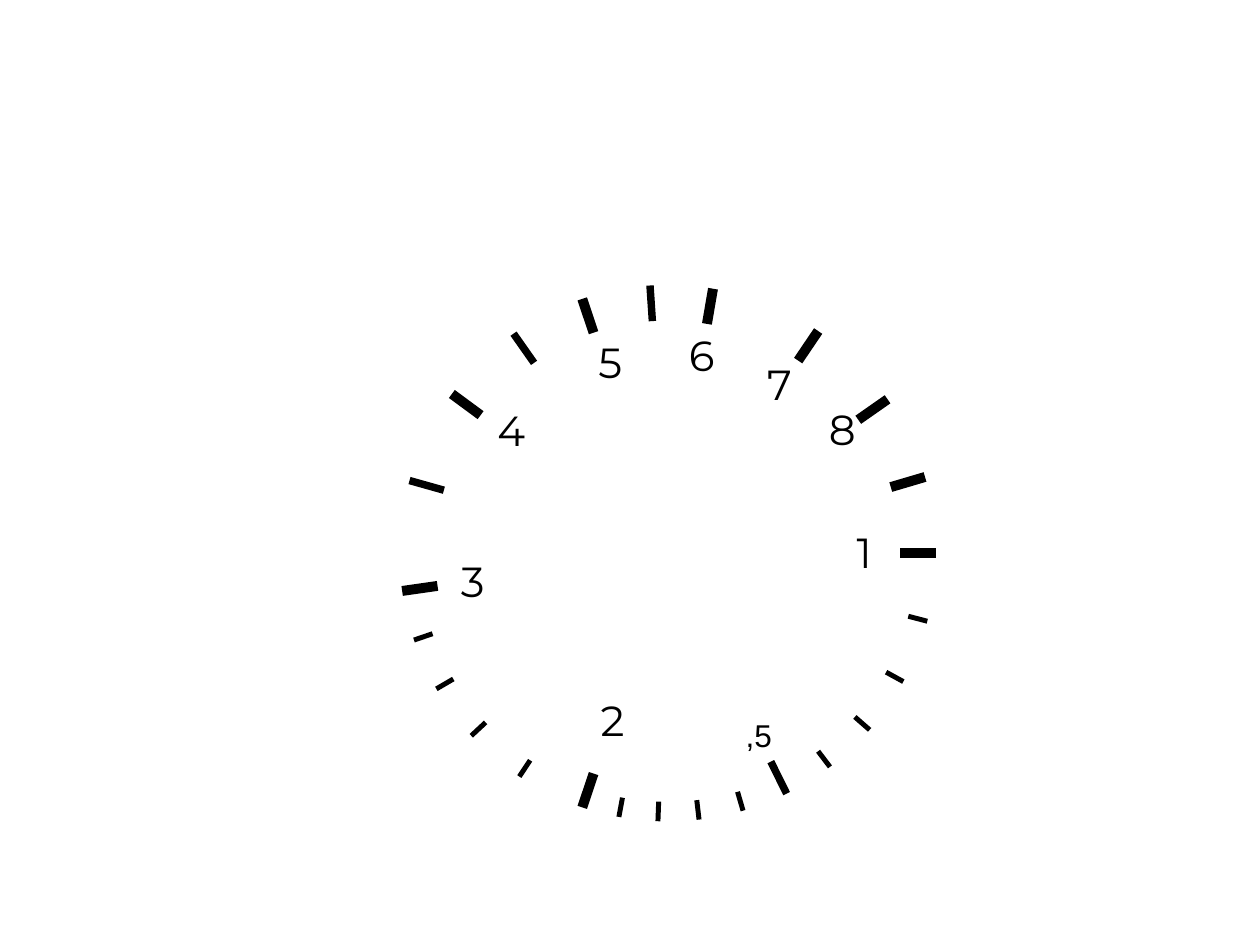
from math import cos, radians, sin

from lxml.etree import SubElement
from pptx import Presentation
from pptx.dml.color import RGBColor
from pptx.enum.shapes import MSO_CONNECTOR as CONN
from pptx.oxml.ns import qn
from pptx.util import Pt

BLACK = "000000"
CX, CY = 381.6, 316.1  # centre of the dial
RADIUS = 153.3         # outer end of every tick


def color(value):
    return RGBColor.from_string(value)


def point(radius, angle):
    """Point on the dial; angles run clockwise from three o'clock."""
    a = radians(angle)
    return Pt(CX + radius * cos(a)), Pt(CY + radius * sin(a))


prs = Presentation()
prs.slide_width, prs.slide_height = Pt(720), Pt(540)
s = prs.slides.add_slide(prs.slide_layouts[6])
dial = s.shapes.add_group_shape().shapes

# Tick length, line width, angles
ticks = [
    (20.4, 5.67, [0, 108.6, 171.9, 216.4, 251.4, 279.7, 304.1, 325, 343.5]),
    (20.4, 4.25, [63.7, 195.7, 234.9, 266.2]),
    (11.2, 2.83, [14.7, 28.6, 41.2, 52.8, 73.7, 83.3, 92.1, 100.5,
                  123.6, 137.1, 149.6, 161.1]),
]
for length, width, angles in ticks:
    for angle in angles:
        tick = dial.add_connector(CONN.STRAIGHT, *point(RADIUS - length, angle),
                                  *point(RADIUS, angle))
        tick.line.color.rgb = color(BLACK)
        tick.line.width = Pt(width)
        SubElement(tick._element.spPr, qn("a:effectLst"))

# Text, left, top, width, height, font size, font
digits = [
    ("1", 482.4, 297.4), ("2", 336.2, 393.1), ("3", 256.3, 313.9),
    ("4", 277.2, 227.5), ("5", 334.8, 188.6), ("6", 386.6, 185),
    ("7", 431.3, 201.6), ("8", 466.6, 226.8),
]
labels = [(*digit, 25.9, 44, 24, "Montserrat") for digit in digits]
labels.append((",5", 419, 405.4, 33.8, 31, 18, "Arial"))
for text, left, top, width, height, size, font in labels:
    sp = dial.add_textbox(Pt(left), Pt(top), Pt(width), Pt(height))
    tf = sp.text_frame
    tf.word_wrap = False
    r = tf.paragraphs[0].add_run()
    r.text = text
    r.font.name = font
    r.font.size = Pt(size)
    r.font.color.rgb = color(BLACK)

prs.save("out.pptx")
